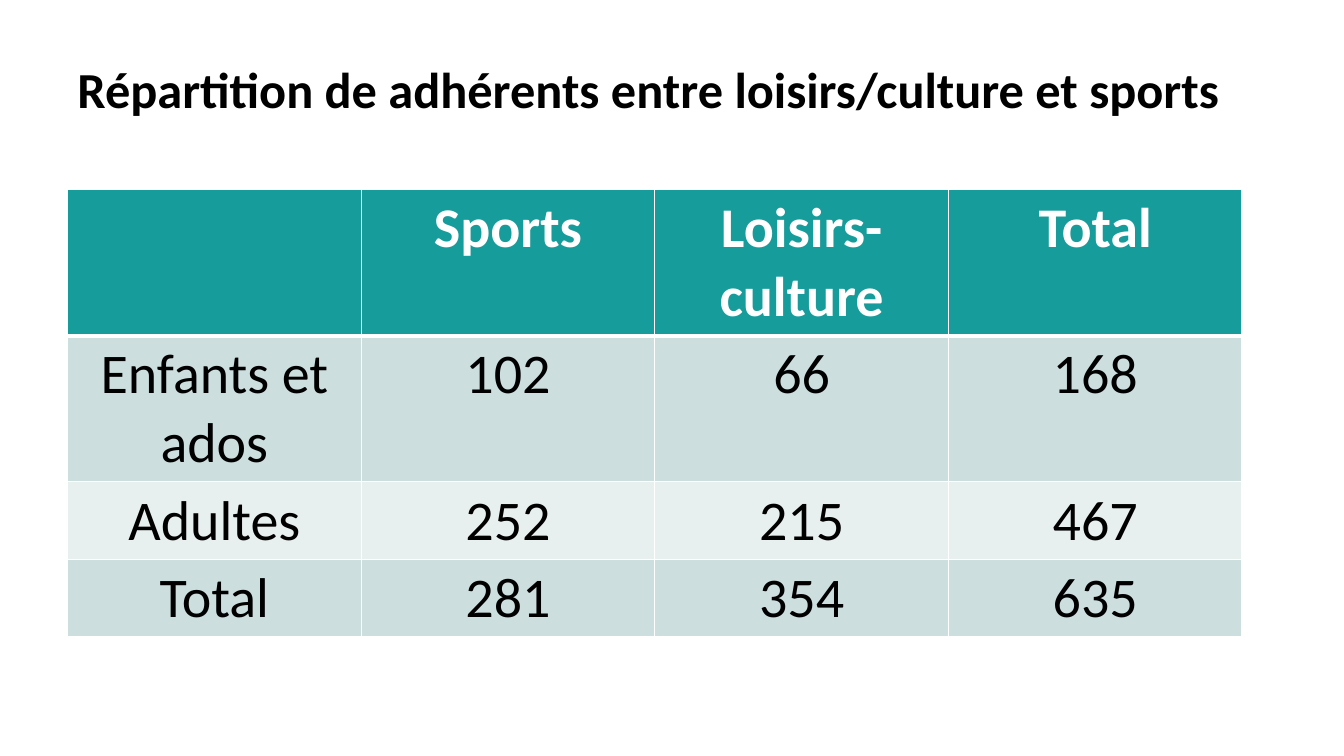
from lxml import etree
from pptx import Presentation
from pptx import util as u
from pptx.dml.color import RGBColor
from pptx.enum import text
from pptx.oxml.ns import qn

WHITE = RGBColor(0xFF, 0xFF, 0xFF)
BLACK = RGBColor(0, 0, 0)
TEAL = RGBColor(0x16, 0x9C, 0x9A)
BANDS = (RGBColor(0xCC, 0xDE, 0xDE), RGBColor(0xE8, 0xEF, 0xEF))

MEMBERS = (
    ("", "Sports", "Loisirs- culture", "Total"),
    ("Enfants et ados", "102", "66", "168"),
    ("Adultes", "252", "215", "467"),
    ("Total", "281", "354", "635"),
)
ROW_HEIGHTS = (1.45, 1.45, 0.77, 0.77)


def write(frame, words, size, color=BLACK, bold=False,
          align=text.PP_ALIGN.LEFT, spacing=1.0):
    """Write one formatted paragraph into a text frame."""
    frame.word_wrap = True
    para = frame.paragraphs[0]
    para.alignment = align
    para.line_spacing = spacing
    span = para.add_run()
    span.text = words
    span.font.name = "Calibri"
    span.font.size = u.Pt(size)
    span.font.bold = bold
    span.font.color.rgb = color


def add_border(cell, side, points):
    """Add a solid white border to one side of a cell."""
    props = cell._tc.get_or_add_tcPr()
    line = etree.SubElement(props, qn(f"a:ln{side}"), w=str(u.Pt(points)))
    fill = etree.SubElement(line, qn("a:solidFill"))
    etree.SubElement(fill, qn("a:srgbClr"), val=str(WHITE))


def add_title(page, left, top, width, height):
    """Place the slide title in the given box."""
    box = page.shapes.add_textbox(left, top, width, height)
    box.text_frame.vertical_anchor = text.MSO_ANCHOR.TOP
    write(box.text_frame, "Répartition de adhérents entre loisirs/culture et sports",
          36, bold=True, spacing=0.9)


def add_members_table(page, left, top, width):
    """Place the table of members in the given box."""
    height = u.Inches(sum(ROW_HEIGHTS))
    table = page.shapes.add_table(
        len(MEMBERS), len(MEMBERS[0]), left, top, width, height).table
    for column in table.columns:
        column.width = width // len(MEMBERS[0])
    for index, labels in enumerate(MEMBERS):
        table.rows[index].height = u.Inches(ROW_HEIGHTS[index])
        header = index == 0
        borders = {"L": 1, "R": 1, "T": 3 if index == 1 else 1, "B": 3 if header else 1}
        for cell, label in zip(table.rows[index].cells, labels):
            for side, points in borders.items():
                add_border(cell, side, points)
            cell.fill.solid()
            cell.fill.fore_color.rgb = TEAL if header else BANDS[(index - 1) % 2]
            if label:
                write(cell.text_frame, label, 40, color=WHITE if header else BLACK,
                      bold=header, align=text.PP_ALIGN.CENTER)


def main():
    """Build and save the deck."""
    deck = Presentation()
    deck.slide_width, deck.slide_height = u.Inches(13.33), u.Inches(7.5)
    page = deck.slides.add_slide(deck.slide_layouts[6])
    left, width = u.Inches(0.67), u.Inches(11.65)
    add_title(page, left, u.Inches(0.6), width, u.Inches(1.24))
    add_members_table(page, left, u.Inches(1.88), width)
    deck.save("out.pptx")


if __name__ == "__main__":
    main()
